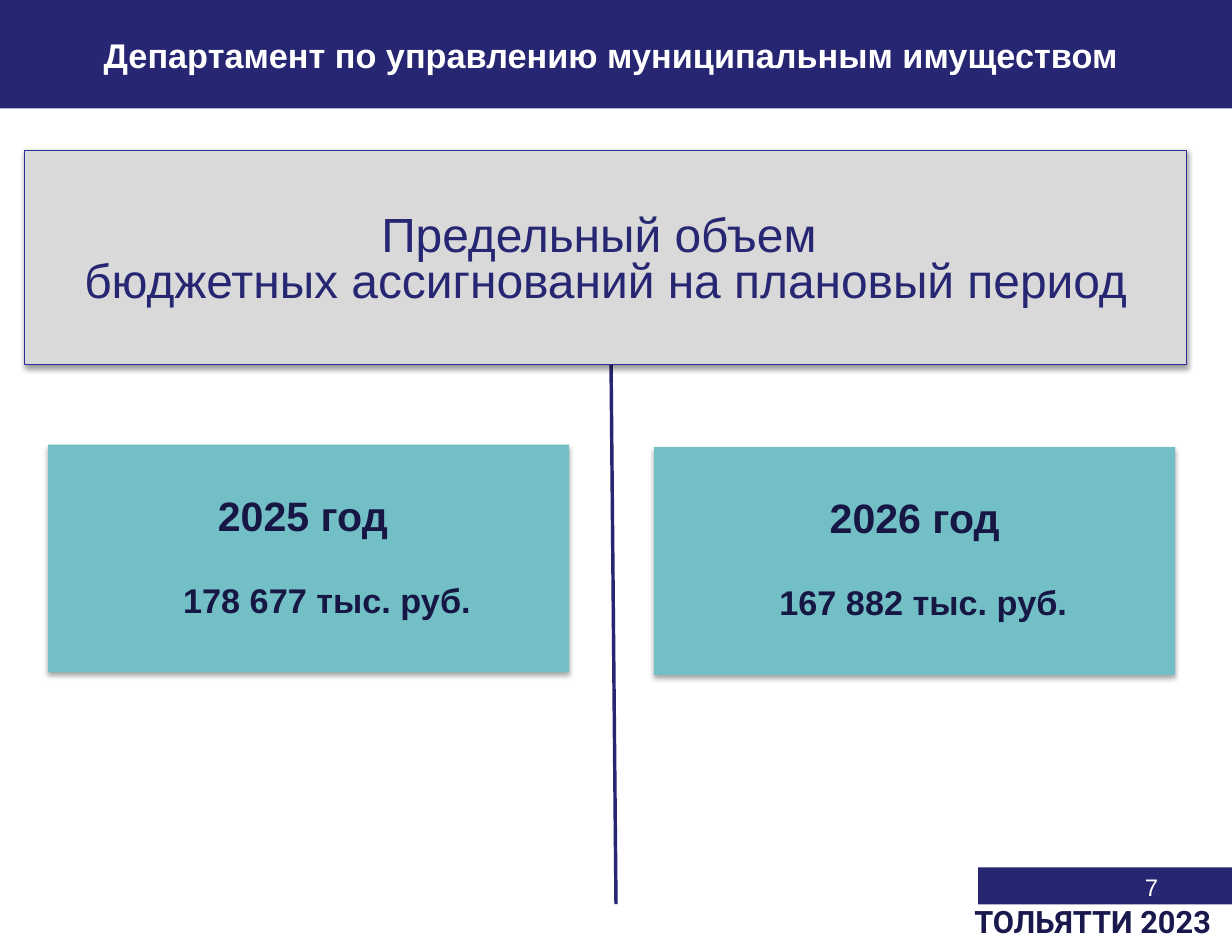
from lxml.etree import fromstring
from pptx import Presentation
from pptx.dml.color import RGBColor
from pptx.enum.shapes import MSO_CONNECTOR as CONN, MSO_SHAPE as SHAPE
from pptx.enum.text import MSO_ANCHOR as ANCHOR, PP_ALIGN as ALIGN
from pptx.util import Inches, Pt

rgb = RGBColor.from_string
NS = 'xmlns:a="http://schemas.openxmlformats.org/drawingml/2006/main"'
NAVY, INK, TEAL, WHITE = "262673", "171745", "72BFC5", "FFFFFF"

prs = Presentation()
prs.slide_width, prs.slide_height = Inches(10), Inches(7.72)
W, H = prs.slide_width / 100, prs.slide_height / 100
s = prs.slides.add_slide(prs.slide_layouts[6])


def box(x, y, w, h, fill=None, shadow=None):
    at = [int(v) for v in (x * W, y * H, w * W, h * H)]
    if fill is None:
        sp = s.shapes.add_textbox(*at)
    else:
        sp = s.shapes.add_shape(SHAPE.RECTANGLE, *at)
        sp.fill.solid()
        sp.fill.fore_color.rgb = rgb(fill)
        sp.line.fill.background()
        sp.shadow.inherit = False
    if shadow:
        alpha, dist = shadow
        effects = sp.element.spPr.find("{*}effectLst")
        effects.append(fromstring(
            f'<a:outerShdw {NS} blurRad="{Pt(3.1)}" dist="{Pt(dist)}" dir="5400000" rotWithShape="0">'
            f'<a:srgbClr val="000000"><a:alpha val="{alpha * 1000}"/></a:srgbClr></a:outerShdw>'))
    tf = sp.text_frame
    tf.word_wrap = True
    tf.vertical_anchor = ANCHOR.TOP
    return sp


def write(tf, text, size=20, color=NAVY, font="Arial", bold=False,
          align=ALIGN.CENTER, spacing=1.0, before=0, indent=0):
    p = tf.paragraphs[0] if not tf.text else tf.add_paragraph()
    if indent:
        p._p.get_or_add_pPr().set("marL", str(int(indent * W)))
    p.alignment, p.line_spacing = align, spacing
    if before:
        p.space_before = Pt(before)
    r = p.add_run()
    r.text = text
    r.font.name, r.font.size, r.font.bold = font, Pt(size), bold
    r.font.color.rgb = rgb(color)


box(79.4, 91.2, 20.6, 3.9, NAVY)
number = box(71.7, 91.06, 23.3, 7)
write(number.text_frame, "7", size=14, color=WHITE, align=ALIGN.RIGHT)

header = box(0, 0, 100, 11.4, NAVY)
tf = header.text_frame
tf.vertical_anchor = ANCHOR.MIDDLE
tf.margin_left, tf.margin_right = int(W), int(1.8 * W)
tf.margin_top = int(1.5 * H)
write(tf, "Департамент по управлению муниципальным имуществом",
      color=WHITE, bold=True, spacing=0.8)

divider = s.shapes.add_connector(
    CONN.STRAIGHT, int(49.6 * W), int(38.34 * H), int(50 * W), int(95.08 * H))
divider.line.color.rgb = rgb(NAVY)
divider.line.width = Pt(2)
divider.element.spPr.append(fromstring(f"<a:effectLst {NS}/>"))

banner = box(2, 15.8, 94.3, 22.54, "D9D9D9", shadow=(38, 1.6))
banner.line.color.rgb = rgb("2F2F98")
banner.line.width = Pt(0.75)
tf = banner.text_frame
tf.margin_top = int(6.9 * H)
for text in ("Предельный объем ", "бюджетных ассигнований на плановый период"):
    write(tf, text, size=28, spacing=0.8)

for x, y, year, amount, indent in (
    (3.9, 46.76, "2025 год ", "178 677 тыс. руб.", 3),
    (53.1, 47.02, "2026 год", "167 882 тыс. руб.", 1.4),
):
    tf = box(x, y, 42.3, 23.96, TEAL, shadow=(35, 1.8)).text_frame
    tf.margin_top = int(4.8 * H)
    write(tf, year, size=24, color=INK, bold=True)
    write(tf, amount, color=INK, bold=True, before=23, indent=indent)

footer = box(78.1, 95.08, 22.1, 4.53)
write(footer.text_frame, "ТОЛЬЯТТИ 2023", size=18, color="19194D", font="Roboto",
      bold=True, align=ALIGN.LEFT, spacing=0.8)

prs.save("out.pptx")
